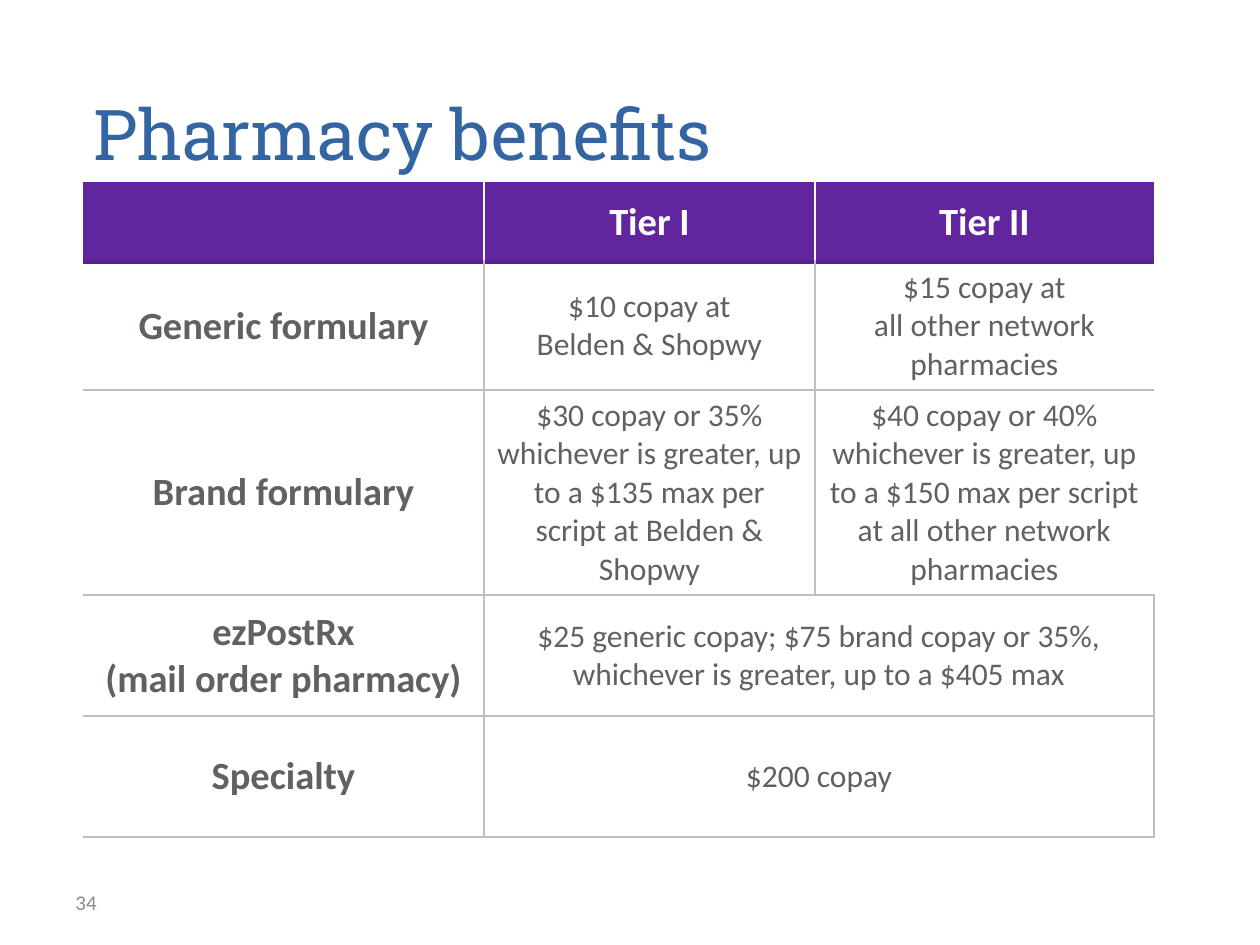
"""Build the pharmacy benefits slide with its tier table."""
from dataclasses import dataclass

from lxml import etree
from pptx import Presentation
from pptx.dml.color import RGBColor
from pptx.enum.text import MSO_ANCHOR, PP_ALIGN
from pptx.oxml.ns import qn
from pptx.util import Emu, Pt

CENTER, LEFT = PP_ALIGN.CENTER, PP_ALIGN.LEFT
TOP, MIDDLE = MSO_ANCHOR.TOP, MSO_ANCHOR.MIDDLE


@dataclass(frozen=True)
class Theme:
    title_font: str = "Roboto Slab"
    body_font: str = "Calibri"
    title_color: str = "3365A2"
    header_fill: str = "61259E"
    header_rule: str = "57218E"
    header_text: str = "FFFFFF"
    body_text: str = "5E6263"
    grid: str = "BFBFBF"
    number_color: str = "8C8C8C"
    title_size: int = 40
    label_size: int = 22
    body_size: int = 18
    number_size: int = 12


THEME = Theme()
SLIDE_SIZE = (1260, 945)
TITLE = ("Pharmacy benefits", (81, 84, 834, 118))
PAGE_NUMBER = ("34", (63, 877, 294, 50))
TABLE_ORIGIN = (83, 182)
COLUMN_WIDTHS = (401, 331, 339)
ROW_HEIGHTS = (80, 128, 205, 121, 121)
ROWS = [
    ("", "Tier I", "Tier II"),
    ("Generic formulary", "$10 copay at\nBelden & Shopwy",
     "$15 copay at\nall other network\npharmacies"),
    ("Brand formulary",
     "$30 copay or 35% whichever is greater, up to a $135 max per script at Belden & Shopwy",
     "$40 copay or 40% whichever is greater, up to a $150 max per script at all other network pharmacies"),
    ("ezPostRx\n(mail order pharmacy)",
     "$25 generic copay; $75 brand copay or 35%, whichever is greater, up to a $405 max"),
    ("Specialty", "$200 copay"),
]


def px(length):
    return Emu(round(length * 914400 / 126))


def write(text_frame, text, font_name, size, color, bold=False, align=LEFT):
    text_frame.text = text
    for paragraph in text_frame.paragraphs:
        paragraph.alignment = align
        font = paragraph.font
        font.name, font.size, font.bold = font_name, Pt(size), bold
        font.color.rgb = RGBColor.from_string(color)


def add_text(slide, content, anchor, *style):
    text, box = content
    text_frame = slide.shapes.add_textbox(*map(px, box)).text_frame
    text_frame.word_wrap = True
    text_frame.vertical_anchor = anchor
    write(text_frame, text, *style)


def set_border(cell, side, color=None, width=1):
    line = etree.SubElement(cell._tc.get_or_add_tcPr(), qn(f"a:ln{side}"), w=str(Pt(width)))
    if color is None:
        etree.SubElement(line, qn("a:noFill"))
    else:
        fill = etree.SubElement(line, qn("a:solidFill"))
        etree.SubElement(fill, qn("a:srgbClr"), val=color)


def style_cell(cell, row, column):
    header = row == 0
    divider = THEME.header_text if header else THEME.grid
    last_column = len(COLUMN_WIDTHS) - 1
    header_edge = (THEME.header_rule, 3)
    set_border(cell, "L", divider if column > 0 else None)
    set_border(cell, "R", divider if column < last_column else None)
    set_border(cell, "T", *(header_edge if row == 1 else (None if header else THEME.grid,)))
    set_border(cell, "B", *(header_edge if header else (THEME.grid,)))
    if header:
        cell.fill.solid()
        cell.fill.fore_color.rgb = RGBColor.from_string(THEME.header_fill)
    else:
        cell.fill.background()
    cell.vertical_anchor = MIDDLE


def add_benefits_table(slide):
    size = (sum(COLUMN_WIDTHS), sum(ROW_HEIGHTS))
    table = slide.shapes.add_table(
        len(ROWS), len(COLUMN_WIDTHS), *map(px, TABLE_ORIGIN + size)).table
    table.horz_banding = False
    for column, width in zip(table.columns, COLUMN_WIDTHS):
        column.width = px(width)
    for row, (texts, height) in enumerate(zip(ROWS, ROW_HEIGHTS)):
        table.rows[row].height = px(height)
        for column in range(len(COLUMN_WIDTHS)):
            style_cell(table.cell(row, column), row, column)
        if len(texts) < len(COLUMN_WIDTHS):
            table.cell(row, len(texts) - 1).merge(table.cell(row, len(COLUMN_WIDTHS) - 1))
        for column, text in enumerate(texts):
            label = row == 0 or column == 0
            write(table.cell(row, column).text_frame, text, THEME.body_font,
                  THEME.label_size if label else THEME.body_size,
                  THEME.header_text if row == 0 else THEME.body_text, label, CENTER)


def main():
    presentation = Presentation()
    presentation.slide_width, presentation.slide_height = map(px, SLIDE_SIZE)
    slide = presentation.slides.add_slide(presentation.slide_layouts[6])
    add_text(slide, PAGE_NUMBER, MIDDLE, THEME.body_font, THEME.number_size, THEME.number_color)
    add_benefits_table(slide)
    add_text(slide, TITLE, TOP, THEME.title_font, THEME.title_size, THEME.title_color)
    presentation.save("out.pptx")


if __name__ == "__main__":
    main()
